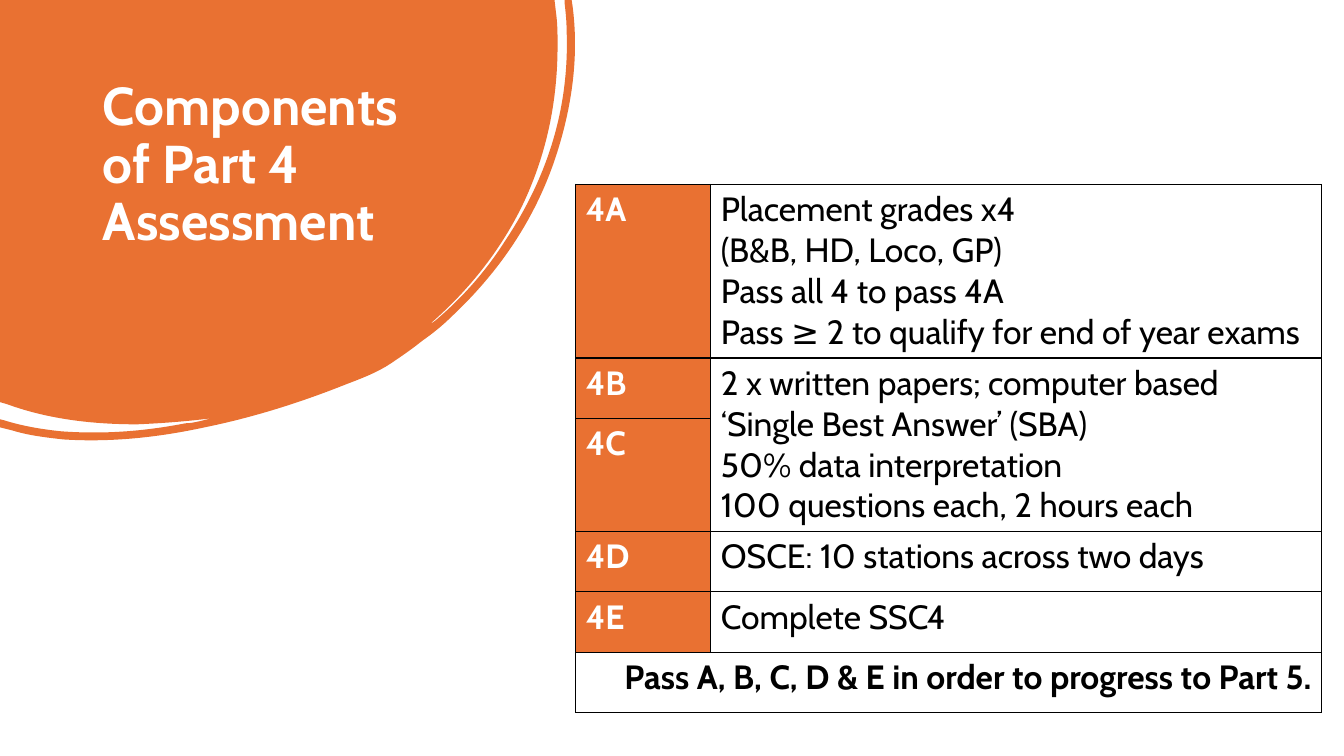
from dataclasses import dataclass

from lxml.etree import SubElement
from pptx import Presentation
from pptx.dml.color import RGBColor
from pptx.enum.text import MSO_ANCHOR as Anchor, MSO_AUTO_SIZE as AutoSize, PP_ALIGN as Align
from pptx.oxml.ns import qn
from pptx.util import Inches, Pt


@dataclass(frozen=True)
class Theme:
    font: str = "Cabin"
    orange: str = "E97132"
    white: str = "FFFFFF"
    black: str = "000000"
    title_size: int = 38
    table_size: int = 24
    border: float = 1


THEME = Theme()

# Blob outline: two numbers make a straight line, six make a Bézier curve
BLOB = [
    (5.5, 0), (5.52, 0.17),
    (5.53, 0.26, 5.53, 0.36, 5.53, 0.45),
    (5.53, 1.01, 5.42, 1.54, 5.18, 2.04),
    (4.96, 2.49, 4.65, 2.88, 4.27, 3.21),
    (4.29, 3.21, 4.3, 3.19, 4.32, 3.18),
    (4.59, 2.95, 4.82, 2.69, 5.01, 2.39),
    (5.43, 1.76, 5.65, 1.07, 5.62, 0.3),
    (5.62, 0.21, 5.61, 0.12, 5.6, 0.03),
    (5.6, 0), (5.67, 0), (5.68, 0.07),
    (5.74, 0.54, 5.68, 1.02, 5.53, 1.5),
    (5.33, 2.14, 4.97, 2.68, 4.48, 3.14),
    (4.39, 3.23, 4.29, 3.31, 4.19, 3.38),
    (4.09, 3.46, 3.99, 3.53, 3.87, 3.61),
    (3.75, 3.69, 3.6, 3.75, 3.44, 3.81),
    (2.99, 3.99, 2.52, 4.14, 2.03, 4.24),
    (1.57, 4.34, 1.1, 4.39, 0.63, 4.36),
    (0.45, 4.34, 0.28, 4.32, 0.12, 4.27),
    (0, 4.24), (0, 4.16), (0.04, 4.17),
    (0.23, 4.23, 0.42, 4.26, 0.61, 4.28),
    (1.03, 4.31, 1.43, 4.28, 1.84, 4.2),
    (1.89, 4.2, 1.93, 4.19, 1.98, 4.18),
    (2.02, 4.17, 2.06, 4.16, 2.1, 4.15),
    (1.86, 4.18, 1.61, 4.2, 1.36, 4.21),
    (0.92, 4.21, 0.48, 4.16, 0.07, 4.01),
    (0, 3.99),
]

# Assessment parts: label, paragraphs, least row height
PARTS = [
    ("4A", ["Placement grades x4 \n(B&B, HD, Loco, GP)", "Pass all 4 to pass 4A",
            "Pass ≥ 2 to qualify for end of year exams"], 1.48),
    ("4B", ["2 x written papers; computer based\n‘Single Best Answer’ (SBA)",
            "50% data interpretation\n100 questions each, 2 hours each"], 0.6),
    ("4C", [], 0.6),
    ("4D", ["OSCE: 10 stations across two days"], 0.6),
    ("4E", ["Complete SSC4"], 0.6),
]
RULE = "Pass A, B, C, D & E in order to progress to Part 5."
RULE_HEIGHT = 0.6
TABLE_HEIGHT = 5.2
COLUMNS = [1.34, 6.06]


def rgb(colour):
    return RGBColor.from_string(colour)


def add_span(para, text, size, colour, bold):
    span = para.add_run()
    span.text = text
    span.font.name = THEME.font
    span.font.size = Pt(size)
    span.font.bold = bold
    span.font.color.rgb = rgb(colour)


def bend(segment, piece):
    """Turn a straight segment into a Bézier curve."""
    segment.tag = qn("a:cubicBezTo")
    for point in list(segment):
        segment.remove(point)
    for x, y in zip(piece[::2], piece[1::2]):
        SubElement(segment, qn("a:pt"), x=str(Inches(x)), y=str(Inches(y)))


def add_blob(page):
    builder = page.shapes.build_freeform(0, 0)
    builder.add_line_segments([(Inches(piece[-2]), Inches(piece[-1])) for piece in BLOB],
                              close=True)
    blob = builder.convert_to_shape()
    segments = list(blob._element.iter(qn("a:lnTo")))
    for segment, piece in zip(segments, BLOB):
        if len(piece) == 6:
            bend(segment, piece)
    blob.shadow.inherit = False
    blob.fill.solid()
    blob.fill.fore_color.rgb = rgb(THEME.orange)
    blob.line.fill.background()


def set_title(page, text):
    title = page.shapes.title
    title.left, title.top = Inches(0.92), Inches(0.74)
    title.width, title.height = Inches(3.52), Inches(2.18)
    frame = title.text_frame
    frame.word_wrap = True
    frame.auto_size = AutoSize.NONE
    frame.vertical_anchor = Anchor.TOP
    para = frame.paragraphs[0]
    para.alignment = Align.LEFT
    para.line_spacing = 0.9
    add_span(para, text, THEME.title_size, THEME.white, True)
    # Bring the title in front of the blob
    page.shapes._spTree.append(title._element)


def style_cell(cell, fill=None):
    properties = cell._tc.get_or_add_tcPr()
    for side in ("a:lnL", "a:lnR", "a:lnT", "a:lnB"):
        line = SubElement(properties, qn(side), w=str(Pt(THEME.border)))
        SubElement(SubElement(line, qn("a:solidFill")), qn("a:srgbClr"), val=THEME.black)
    if fill:
        cell.fill.solid()
        cell.fill.fore_color.rgb = rgb(fill)
    else:
        cell.fill.background()


def write_cell(cell, paragraphs, colour=THEME.black, bold=False, align=Align.LEFT):
    frame = cell.text_frame
    for index, text in enumerate(paragraphs):
        para = frame.add_paragraph() if index else frame.paragraphs[0]
        para.alignment = align
        for number, line in enumerate(text.split("\n")):
            if number:
                para.add_line_break()
            add_span(para, line, THEME.table_size, colour, bold)


def add_parts_table(page):
    heights = [height for _, _, height in PARTS] + [RULE_HEIGHT]
    holder = page.shapes.add_table(len(heights), len(COLUMNS), Inches(5.71), Inches(1.83),
                                   Inches(sum(COLUMNS)), Inches(TABLE_HEIGHT))
    table = holder.table
    table.first_row = table.horz_banding = False
    for column, width in zip(table.columns, COLUMNS):
        column.width = Inches(width)
    for row, height in zip(table.rows, heights):
        row.height = Inches(height)
    holder.height = Inches(TABLE_HEIGHT)

    # One row for each part
    for index, (label, details, _) in enumerate(PARTS):
        head, body = table.cell(index, 0), table.cell(index, 1)
        style_cell(head, THEME.orange)
        style_cell(body)
        write_cell(head, [label], THEME.white, True)
        write_cell(body, details)
    table.cell(1, 1).merge(table.cell(2, 1))

    # Closing rule across both columns
    last = len(PARTS)
    for column in range(len(COLUMNS)):
        style_cell(table.cell(last, column))
    table.cell(last, 0).merge(table.cell(last, 1))
    write_cell(table.cell(last, 0), [RULE], bold=True, align=Align.RIGHT)


def main():
    deck = Presentation()
    deck.slide_width, deck.slide_height = Inches(13.33), Inches(7.5)
    page = deck.slides.add_slide(deck.slide_layouts[5])
    add_blob(page)
    set_title(page, "Components of Part 4 Assessment")
    add_parts_table(page)
    deck.save("out.pptx")


if __name__ == "__main__":
    main()
